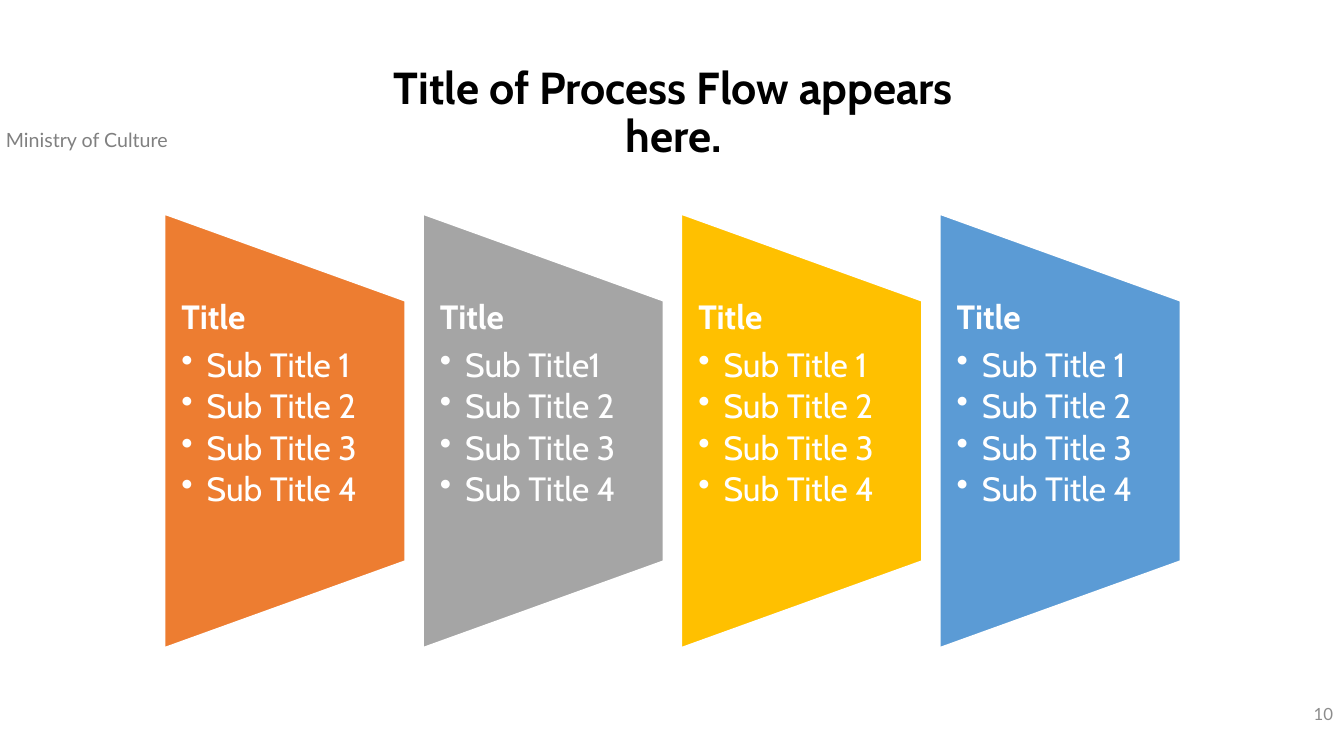
from pptx import Presentation
from pptx.dml.color import RGBColor as Rgb
from pptx.enum.shapes import MSO_SHAPE as Kind
from pptx.enum.text import MSO_ANCHOR as Anchor, MSO_AUTO_SIZE as Fit, PP_ALIGN as Align
from pptx.oxml.xmlchemy import OxmlElement as Node
from pptx.util import Inches, Pt

TITLE = "Title of Process Flow appears here."
OWNER = "Ministry of Culture"
PAGE = "10"
STEPS = [
    ("Title", ["Sub Title 1", "Sub Title 2", "Sub Title 3", "Sub Title 4"], "ED7D31"),
    ("Title", ["Sub Title1", "Sub Title 2", "Sub Title 3", "Sub Title 4"], "A5A5A5"),
    ("Title", ["Sub Title 1", "Sub Title 2", "Sub Title 3", "Sub Title 4"], "FFC000"),
    ("Title", ["Sub Title 1", "Sub Title 2", "Sub Title 3", "Sub Title 4"], "5B9BD5"),
]

THEME = {
    "title": {"name": "Cabin", "size": Pt(32), "bold": True, "color": "000000"},
    "head": {"name": "Cabin", "size": Pt(24), "bold": True, "color": "FFFFFF"},
    "item": {"name": "Cabin", "size": Pt(24), "bold": False, "color": "FFFFFF"},
    "owner": {"name": "Lato", "size": Pt(14), "color": "808080"},
    "page": {"name": "Lato", "size": Pt(12), "color": "8C8C8C"},
    "edge": "FFFFFF",
}
LEFT, TOP, PITCH = 1.63, 2.12, 2.563
WIDE, TALL = 2.39, 4.31
TEXT_TOP, TEXT_TALL = 2.98, 2.59


def style(para, text, look, **form):
    para.text = text
    for key, val in form.items():
        setattr(para, key, val)
    for key, val in THEME[look].items():
        if key == "color":
            para.font.color.rgb = Rgb.from_string(val)
        else:
            setattr(para.font, key, val)


def add_box(home, area):
    box = home.add_textbox(*map(Inches, area))
    box.text_frame.word_wrap = True
    return box.text_frame


def add_bullet(para):
    props = para._p.get_or_add_pPr()
    props.set("marL", str(Inches(0.25)))
    props.set("indent", str(Inches(-0.25)))
    dot = Node("a:buChar")
    dot.set("char", "•")
    props.append(dot)


def add_step(slide, left, head, items, fill):
    group = slide.shapes.add_group_shape().shapes
    mid, core = left + WIDE / 2, TOP + TALL / 2
    area = (mid - TALL / 2, core - WIDE / 2, TALL, WIDE)
    panel = group.add_shape(Kind.FLOWCHART_MANUAL_OPERATION, *map(Inches, area))
    panel.rotation = 270
    panel.shadow.inherit = False
    panel.fill.solid()
    panel.fill.fore_color.rgb = Rgb.from_string(fill)
    panel.line.color.rgb = Rgb.from_string(THEME["edge"])
    panel.line.width = Pt(1.5)

    frame = add_box(group, (left, TEXT_TOP, WIDE, TEXT_TALL))
    pads = {"margin_left": 0.17, "margin_right": 0.17, "margin_top": 0, "margin_bottom": 0}
    for key, val in pads.items():
        setattr(frame, key, Inches(val))
    style(frame.paragraphs[0], head, "head", line_spacing=0.9, space_after=Pt(8.4))
    for item in items:
        para = frame.add_paragraph()
        add_bullet(para)
        style(para, item, "item", level=1, line_spacing=0.9, space_after=Pt(3.6))


def main():
    deck = Presentation()
    deck.slide_width, deck.slide_height = Inches(13.33), Inches(7.5)
    slide = deck.slides.add_slide(deck.slide_layouts[5])

    title = slide.shapes.title
    spot = {"left": 3.28, "top": 0.6, "width": 6.8, "height": 1.07}
    for key, val in spot.items():
        setattr(title, key, Inches(val))
    frame = title.text_frame
    form = {"word_wrap": True, "auto_size": Fit.NONE, "vertical_anchor": Anchor.TOP}
    for key, val in form.items():
        setattr(frame, key, val)
    style(frame.paragraphs[0], TITLE, "title", alignment=Align.CENTER, line_spacing=0.9)

    owner = add_box(slide.shapes, (-0.04, 1.22, 2.9, 0.34))
    style(owner.paragraphs[0], OWNER, "owner")
    page = add_box(slide.shapes, (10.32, 6.88, 3, 0.4))
    page.vertical_anchor = Anchor.MIDDLE
    style(page.paragraphs[0], PAGE, "page", alignment=Align.RIGHT)

    for num, step in enumerate(STEPS):
        add_step(slide, LEFT + num * PITCH, *step)
    deck.save("out.pptx")


if __name__ == "__main__":
    main()
